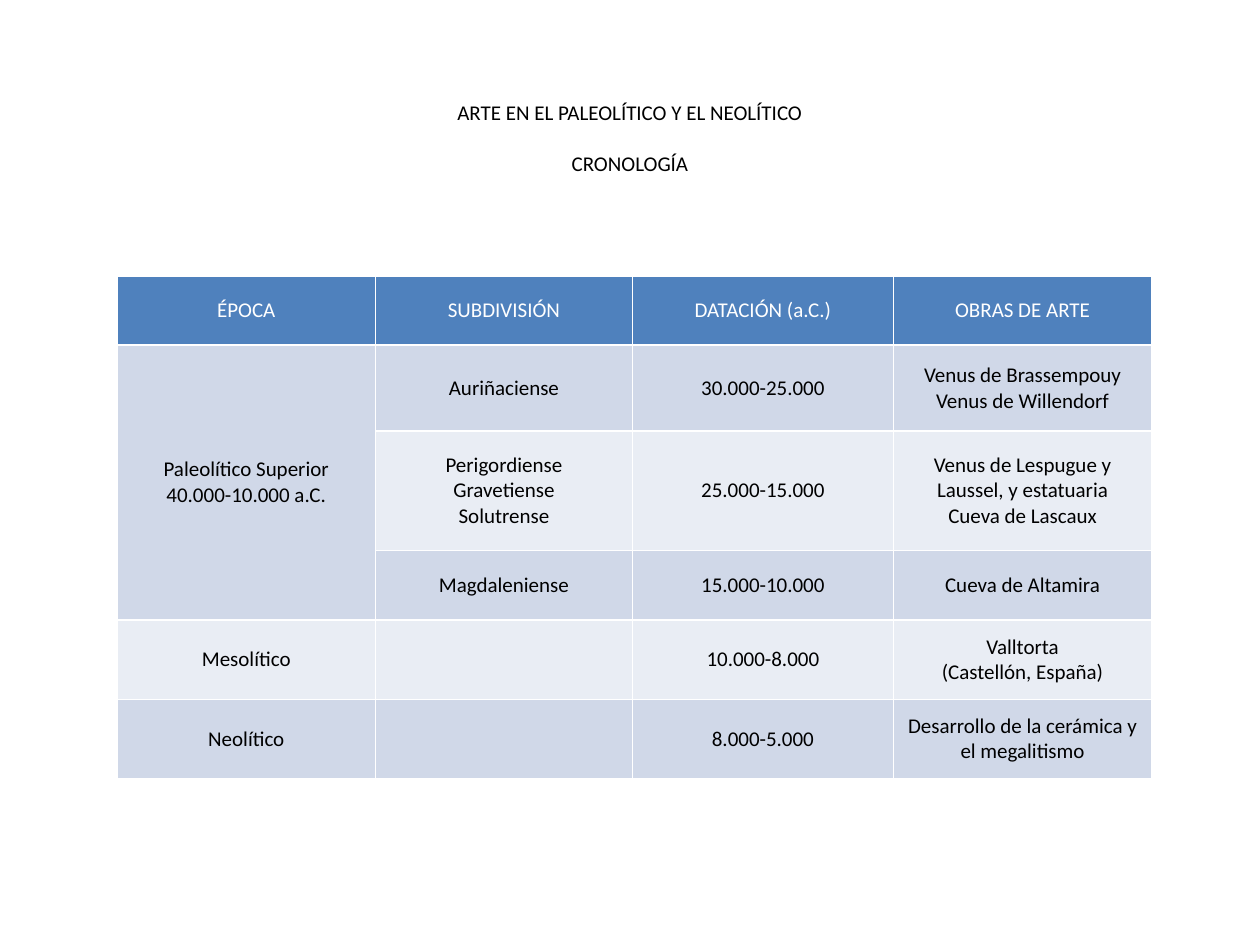
from dataclasses import dataclass

from lxml.etree import SubElement
from pptx import Presentation
from pptx.dml.color import RGBColor
from pptx.enum.text import MSO_ANCHOR, PP_ALIGN
from pptx.oxml.ns import qn
from pptx.slide import Slide
from pptx.table import Table, _Cell
from pptx.text.text import TextFrame
from pptx.util import Cm, Pt

BLACK = RGBColor(0x00, 0x00, 0x00)
WHITE = RGBColor(0xFF, 0xFF, 0xFF)
HEADER_BLUE = RGBColor(0x4F, 0x81, 0xBD)
DARK_BAND = RGBColor(0xD0, 0xD8, 0xE8)
LIGHT_BAND = RGBColor(0xE9, 0xED, 0xF4)

FONT_FORMAT = {"name": "Calibri", "size": Pt(12), "bold": False}
TABLE_FORMAT = {"first_row": False, "horz_banding": False}
BORDER_SIDES = ("a:lnL", "a:lnR", "a:lnT", "a:lnB")

TITLE = "ARTE EN EL PALEOLÍTICO Y EL NEOLÍTICO\nCRONOLOGÍA"
COLUMN_WIDTHS = (Cm(5.21), Cm(5.18), Cm(5.26), Cm(5.21))


@dataclass
class Period:
    height: Cm
    fill: RGBColor
    entries: tuple[str, str, str, str]
    color: RGBColor = BLACK


PERIODS = [
    Period(Cm(1.4), HEADER_BLUE,
           ("ÉPOCA", "SUBDIVISIÓN", "DATACIÓN (a.C.)", "OBRAS DE ARTE"), WHITE),
    Period(Cm(1.73), DARK_BAND,
           ("Paleolítico Superior\n40.000-10.000 a.C.", "Auriñaciense", "30.000-25.000",
            "Venus de Brassempouy\nVenus de Willendorf")),
    Period(Cm(2.41), LIGHT_BAND,
           ("", "Perigordiense\nGravetiense\nSolutrense", "25.000-15.000",
            "Venus de Lespugue y Laussel, y estatuaria\nCueva de Lascaux")),
    Period(Cm(1.4), DARK_BAND, ("", "Magdaleniense", "15.000-10.000", "Cueva de Altamira")),
    Period(Cm(1.6), LIGHT_BAND,
           ("Mesolítico", "", "10.000-8.000", "Valltorta\n(Castellón, España)")),
    Period(Cm(1.6), DARK_BAND,
           ("Neolítico", "", "8.000-5.000", "Desarrollo de la cerámica y el megalitismo")),
]


def apply_format(target: object, values: dict) -> None:
    for attribute, value in values.items():
        setattr(target, attribute, value)


def write_centred(frame: TextFrame, text: str, color: RGBColor) -> None:
    frame.text = text
    for paragraph in frame.paragraphs:
        paragraph.alignment = PP_ALIGN.CENTER
        for run in paragraph.runs:
            apply_format(run.font, FONT_FORMAT)
            run.font.color.rgb = color


def add_title(slide: Slide) -> None:
    heading = slide.shapes.add_textbox(Cm(1.27), Cm(1.22), Cm(22.86), Cm(3.1)).text_frame
    apply_format(heading, {"word_wrap": True, "vertical_anchor": MSO_ANCHOR.MIDDLE})
    write_centred(heading, TITLE, BLACK)
    heading.paragraphs[1].space_before = Pt(14.5)


def add_borders(cell: _Cell) -> None:
    properties = cell._tc.get_or_add_tcPr()
    for side in BORDER_SIDES:
        border = SubElement(properties, qn(side), w=str(Pt(1)))
        solid = SubElement(border, qn("a:solidFill"))
        SubElement(solid, qn("a:srgbClr"), val=str(WHITE))


def fill_row(table: Table, index: int, period: Period) -> None:
    table.rows[index].height = period.height
    for column, entry in enumerate(period.entries):
        cell = table.cell(index, column)
        cell.vertical_anchor = MSO_ANCHOR.MIDDLE
        write_centred(cell.text_frame, entry, period.color)
        add_borders(cell)
        cell.fill.solid()
        cell.fill.fore_color.rgb = period.fill


def add_chronology(slide: Slide) -> None:
    table = slide.shapes.add_table(
        len(PERIODS), len(COLUMN_WIDTHS), Cm(2.36), Cm(5.56),
        sum(COLUMN_WIDTHS), sum(period.height for period in PERIODS)).table
    apply_format(table, TABLE_FORMAT)
    for column, width in zip(table.columns, COLUMN_WIDTHS):
        column.width = width
    for index, period in enumerate(PERIODS):
        fill_row(table, index, period)
    table.cell(1, 0).merge(table.cell(3, 0))


def main() -> None:
    presentation = Presentation()
    apply_format(presentation, {"slide_width": Cm(25.4), "slide_height": Cm(19.05)})
    slide = presentation.slides.add_slide(presentation.slide_layouts[6])
    add_title(slide)
    add_chronology(slide)
    presentation.save("out.pptx")


if __name__ == "__main__":
    main()
